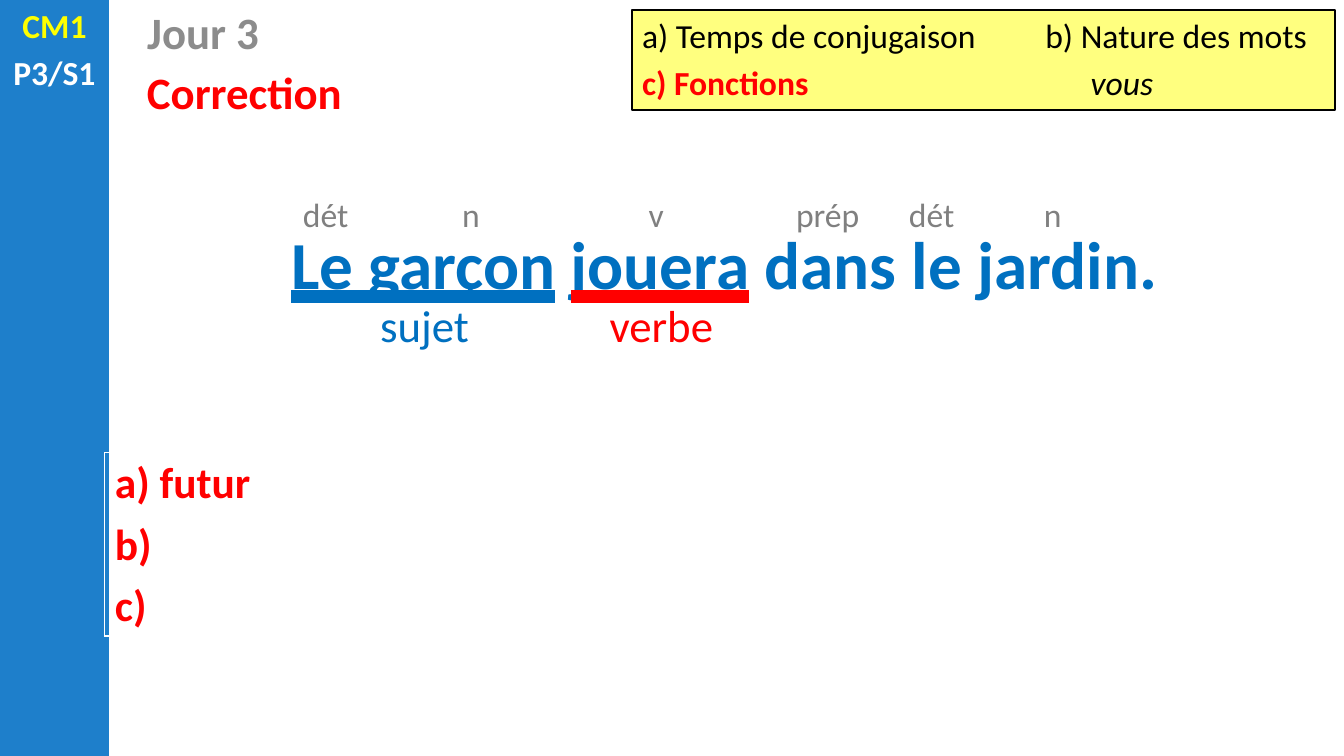
import pptx
import pptx.dml.color
import pptx.enum.shapes
import pptx.enum.text
import pptx.oxml
import pptx.oxml.ns
import pptx.util
from pptx.util import Inches

RGBColor = pptx.dml.color.RGBColor
SIDEBAR = RGBColor(0x1E, 0x7F, 0xCB)
YELLOW = RGBColor(0xFF, 0xFF, 0x00)
WHITE = RGBColor(0xFF, 0xFF, 0xFF)
BLACK = RGBColor(0x00, 0x00, 0x00)
RED = RGBColor(0xFF, 0x00, 0x00)
BLUE = RGBColor(0x00, 0x70, 0xC0)
GREY = RGBColor(0x80, 0x80, 0x80)
DAY_GREY = RGBColor(0x8C, 0x8C, 0x8C)

RECTANGLE = pptx.enum.shapes.MSO_SHAPE.RECTANGLE
LEFT = pptx.enum.text.PP_ALIGN.LEFT
CENTER = pptx.enum.text.PP_ALIGN.CENTER
TOP = pptx.enum.text.MSO_ANCHOR.TOP
GROW = pptx.enum.text.MSO_AUTO_SIZE.SHAPE_TO_FIT_TEXT
HEAVY = pptx.enum.text.MSO_UNDERLINE.HEAVY_LINE
NS = pptx.oxml.ns.nsdecls("a")


def write(tf, size, align, *paragraphs):
    """Fill a text frame; each paragraph is a list of (text, colour, bold)."""
    tf.word_wrap = True
    tf.vertical_anchor = TOP
    for i, runs in enumerate(paragraphs):
        p = tf.paragraphs[0] if i == 0 else tf.add_paragraph()
        p.alignment = align
        p.space_before = pptx.util.Pt(size * 0.2)
        for text, colour, bold in runs:
            r = p.add_run()
            r.text = text
            r.font.name = "Calibri"
            r.font.size = pptx.util.Pt(size)
            r.font.bold = bold
            r.font.color.rgb = colour


def add_text(left, top, width, height, size, align, *paragraphs):
    sp = slide.shapes.add_textbox(Inches(left), Inches(top), Inches(width), Inches(height))
    write(sp.text_frame, size, align, *paragraphs)
    sp.text_frame.auto_size = GROW
    return sp.text_frame


prs = pptx.Presentation()
prs.slide_width = Inches(13.33)
prs.slide_height = Inches(7.5)
slide = prs.slides.add_slide(prs.slide_layouts[5])

# Sidebar
sidebar = slide.shapes.add_shape(RECTANGLE, 0, 0, Inches(1.08), Inches(7.5))
sidebar.shadow.inherit = False
sidebar.fill.solid()
sidebar.fill.fore_color.rgb = SIDEBAR
sidebar.line.fill.background()
add_text(0, 0, 1.08, 0.99, 24, CENTER, [("CM1", YELLOW, True)], [("P3/S1", WHITE, True)])

# Headings
title = slide.shapes.title
title.left, title.top = Inches(1.36), Inches(0)
title.width, title.height = Inches(7.91), Inches(0.64)
write(title.text_frame, 32, LEFT, [("Jour 3", DAY_GREY, True)])
title.text_frame.auto_size = GROW
add_text(1.36, 0.59, 4.83, 0.64, 32, LEFT, [("Correction", RED, True)])

# Instructions
box = slide.shapes.add_shape(RECTANGLE, Inches(6.27), Inches(0.1), Inches(6.97), Inches(0.99))
box.shadow.inherit = False
box.fill.solid()
box.fill.fore_color.rgb = YELLOW
colour = box.fill._xPr.find(".//" + pptx.oxml.ns.qn("a:srgbClr"))
colour.append(pptx.oxml.parse_xml(f'<a:alpha {NS} val="50000"/>'))
box.line.color.rgb = BLACK
box.line.width = pptx.util.Pt(1.5)
write(box.text_frame, 24, LEFT,
      [("a) Temps de conjugaison\tb) Nature des mots", BLACK, False)],
      [("c) Fonctions\t", RED, True), ("vous", BLACK, False)])
box.text_frame.paragraphs[1].runs[1].font.italic = True
for p, stop in zip(box.text_frame.paragraphs, (4, 4.45)):
    p._p.get_or_add_pPr().append(pptx.oxml.parse_xml(
        f'<a:tabLst {NS}><a:tab pos="{Inches(stop)}" algn="l"/></a:tabLst>'))

# Sentence, with the subject and the verb underlined
tf = add_text(1.04, 2.16, 12.29, 0.91, 48, CENTER,
              [(text, BLUE, True) for text in ("Le garçon", " ", "jouera", " dans le jardin.")])
runs = tf.paragraphs[0].runs
for r, underline in ((runs[0], BLUE), (runs[2], RED)):
    r.font.underline = HEAVY
    latin = r.font._element.find(pptx.oxml.ns.qn("a:latin"))
    latin.addprevious(pptx.oxml.parse_xml(
        f'<a:uFill {NS}><a:solidFill><a:srgbClr val="{underline}"/></a:solidFill></a:uFill>'))

# Word classes above, functions below
for left, word_class in ((2.78, "dét"), (4.22, "n"), (6.06, "v"),
                         (7.76, "prép"), (8.79, "dét"), (9.99, "n")):
    add_text(left, 1.87, 0.9, 0.5, 24, CENTER, [(word_class, GREY, False)])
for left, function, colour in ((3.59, "sujet", BLUE), (5.94, "verbe", RED)):
    add_text(left, 2.9, 1.24, 0.64, 32, CENTER, [(function, colour, False)])

# Answers
table = slide.shapes.add_table(1, 1, Inches(1.04), Inches(4.49), Inches(12.29), Inches(1.82)).table
table.first_row = False
table.horz_banding = False
cell = table.cell(0, 0)
cell.fill.background()
write(cell.text_frame, 31, LEFT, *([(text, RED, True)] for text in ("a) futur", "b)", "c)")))
for p in cell.text_frame.paragraphs:
    p.space_before = pptx.util.Pt(0)
    p.space_after = pptx.util.Pt(6)

prs.save("out.pptx")
